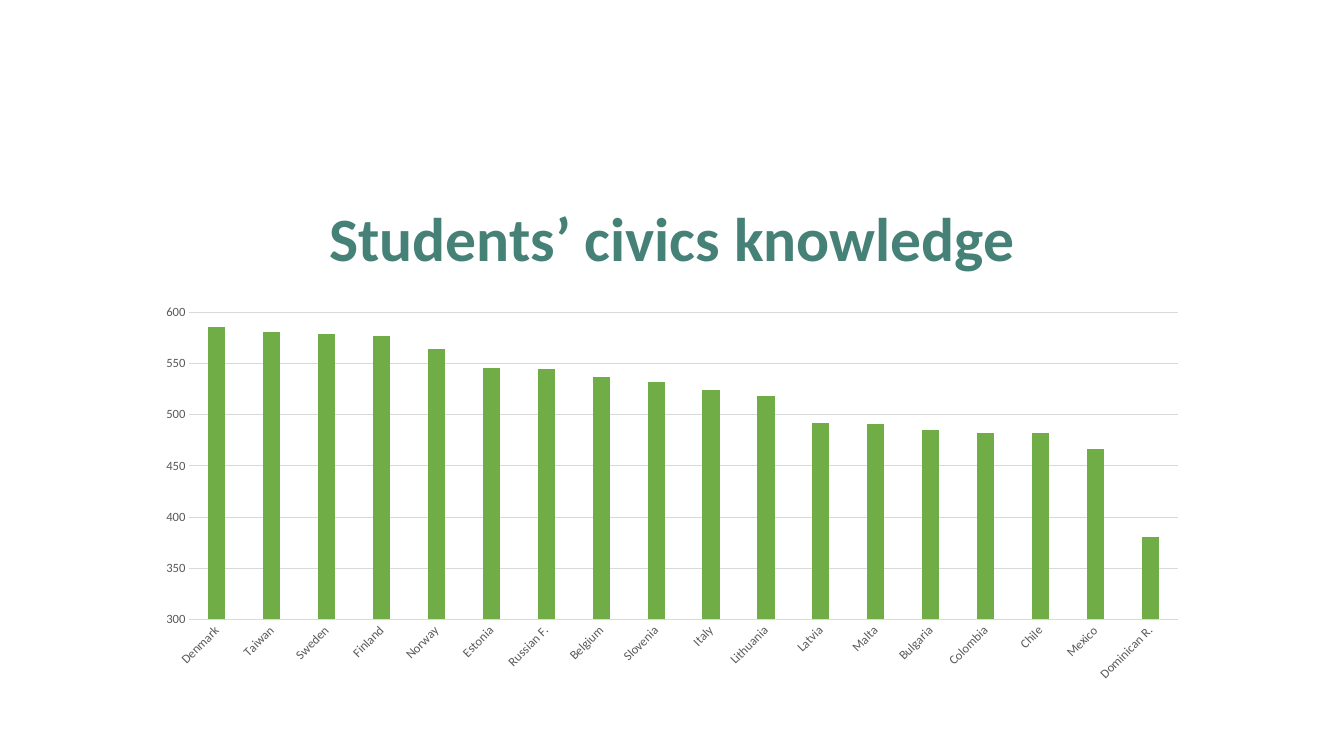
from pptx import Presentation
from pptx.chart.data import CategoryChartData
from pptx.dml.color import RGBColor
from pptx.enum.chart import XL_CHART_TYPE as ChartType, XL_TICK_MARK as TickMark
from pptx.enum.text import MSO_ANCHOR as Anchor, PP_ALIGN as Align
from pptx.util import Emu, Pt

EMU_PER_PX = 9144
FONT = "Calibri"
SCORES = {
    "Denmark": 586, "Taiwan": 581, "Sweden": 579, "Finland": 577,
    "Norway": 564, "Estonia": 546, "Russian F.": 545, "Belgium": 537,
    "Slovenia": 532, "Italy": 524, "Lithuania": 518, "Latvia": 492,
    "Malta": 491, "Bulgaria": 485, "Colombia": 482, "Chile": 482,
    "Mexico": 467, "Dominican R.": 381,
}


def px(*lengths):
    """Turn pixel lengths into EMU."""
    return [Emu(length * EMU_PER_PX) for length in lengths]


def color(hex_string):
    """Turn a hex string into a colour."""
    return RGBColor.from_string(hex_string)


def style_font(font, size, fill, bold=False):
    """Set the typeface, size, weight and colour of a font."""
    font.name = FONT
    font.size = Pt(size)
    font.bold = bold
    font.color.rgb = color(fill)


def style_line(line, fill, width=0.75):
    """Set the colour and point width of a line."""
    line.color.rgb = color(fill)
    line.width = Pt(width)


def add_text(slide, text, box, size=18, fill="000000", bold=False,
             align=Align.LEFT, anchor=Anchor.TOP, line_spacing=1.0):
    """Add a wrapped text box holding one formatted paragraph."""
    frame = slide.shapes.add_textbox(*px(*box)).text_frame
    frame.word_wrap = True
    frame.vertical_anchor = anchor
    paragraph = frame.paragraphs[0]
    paragraph.alignment = align
    paragraph.line_spacing = line_spacing
    run = paragraph.add_run()
    run.text = text
    style_font(run.font, size, fill, bold)


def style_axis(axis):
    """Give an axis small grey labels and no tick marks."""
    axis.major_tick_mark = axis.minor_tick_mark = TickMark.NONE
    style_font(axis.tick_labels.font, 9, "595959")


def add_column_chart(slide, scores, box, fill):
    """Add a single-series column chart of scores by country."""
    data = CategoryChartData()
    data.categories = list(scores)
    data.add_series("Series 1", list(scores.values()))
    chart = slide.shapes.add_chart(
        ChartType.COLUMN_CLUSTERED, *px(*box), data).chart
    chart.has_legend = False
    chart.has_title = False
    style_font(chart.font, 10, "000000")

    plot = chart.plots[0]
    plot.vary_by_categories = False
    plot.gap_width = 219
    plot.overlap = -27
    bars = plot.series[0].format.fill
    bars.solid()
    bars.fore_color.rgb = color(fill)

    countries, values = chart.category_axis, chart.value_axis
    style_axis(countries)
    style_line(countries.format.line, "D9D9D9")
    for body in chart.element.xpath(".//c:catAx/c:txPr/a:bodyPr"):
        body.set("rot", "-2700000")
        body.set("vert", "horz")

    style_axis(values)
    values.minimum_scale, values.maximum_scale = 300, 600
    values.major_unit = 50
    values.format.line.fill.background()
    style_line(values.major_gridlines.format.line, "D9D9D9")


def main():
    """Build and save the slide."""
    presentation = Presentation()
    presentation.slide_width, presentation.slide_height = px(1333, 750)
    slide = presentation.slides.add_slide(presentation.slide_layouts[6])
    add_text(slide, "Students’ civics knowledge", (167, 158, 1000, 120),
             size=44, fill="468177", bold=True, align=Align.CENTER,
             anchor=Anchor.BOTTOM, line_spacing=0.9)
    add_column_chart(slide, SCORES, (144, 295, 1045, 389), "70AD47")
    presentation.save("out.pptx")


if __name__ == "__main__":
    main()
